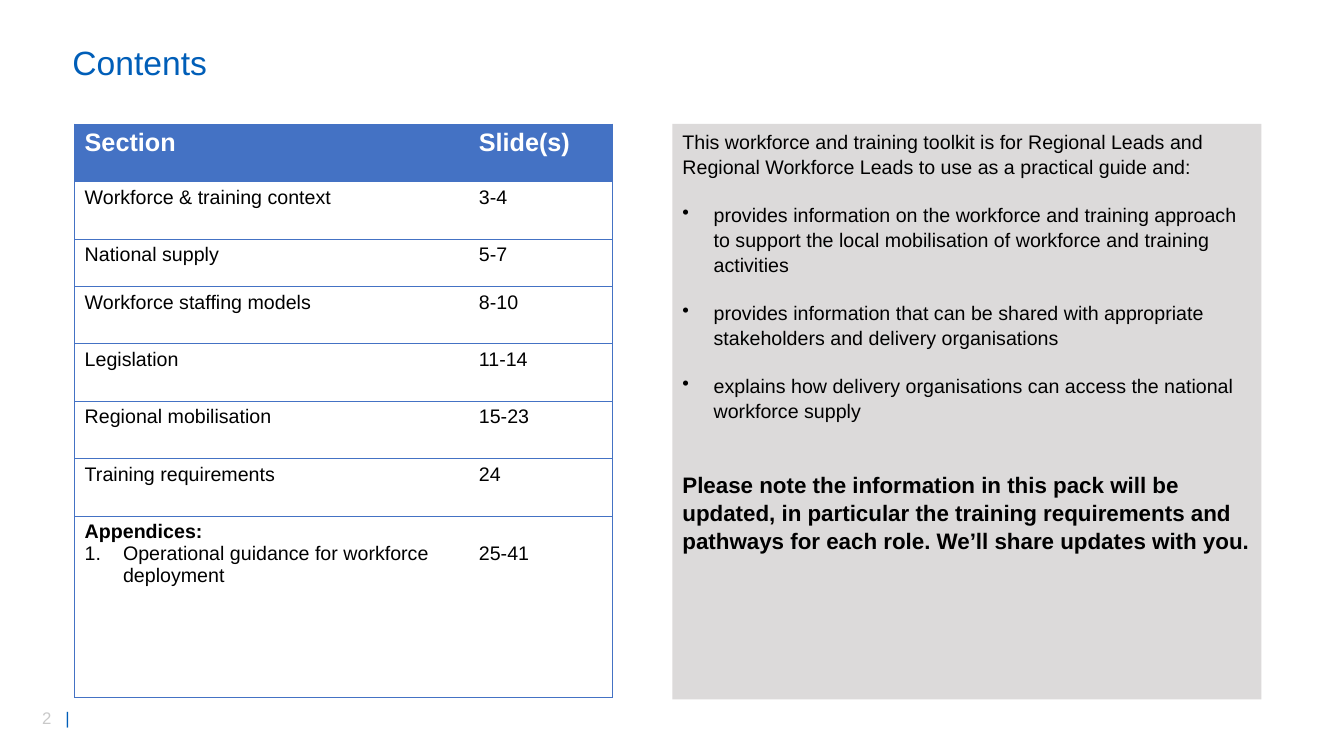
"""Builds a contents slide with a section table and a guidance panel."""
from lxml.etree import SubElement as Sub
from pptx import Presentation
from pptx.dml.color import RGBColor
from pptx.enum.shapes import MSO_SHAPE as Shape
from pptx.enum.text import MSO_ANCHOR as Anchor, PP_ALIGN as Align
from pptx.oxml.ns import qn
from pptx.util import Inches, Pt

BLUE = RGBColor(0x00, 0x5E, 0xB8)
HEAD = RGBColor(0x44, 0x72, 0xC4)
PANEL = RGBColor(0xDC, 0xDA, 0xDA)
PALE = RGBColor(0xC9, 0xC9, 0xC9)
BLACK = RGBColor(0x00, 0x00, 0x00)
WHITE = RGBColor(0xFF, 0xFF, 0xFF)

ROWS = [
    ("Section", "Slide(s)"),
    ("Workforce & training context", "3-4"),
    ("National supply", "5-7"),
    ("Workforce staffing models", "8-10"),
    ("Legislation", "11-14"),
    ("Regional mobilisation", "15-23"),
    ("Training requirements", "24"),
    ("Appendices:", "25-41"),
]
HEIGHTS = [0.57, 0.57, 0.47, 0.57, 0.57, 0.57, 0.57, 1.8]
INTRO = ("This workforce and training toolkit is for Regional Leads and "
         "Regional Workforce Leads to use as a practical guide and:")
POINTS = [
    "provides information on the workforce and training approach to support "
    "the local mobilisation of workforce and training activities",
    "provides information that can be shared with appropriate stakeholders "
    "and delivery organisations",
    "explains how delivery organisations can access the national workforce "
    "supply",
]
NOTE = ("Please note the information in this pack will be updated, in "
        "particular the training requirements and pathways for each role. "
        "We’ll share updates with you.")


class Deck:
    """Holds the style and the current slide."""

    def __init__(self):
        self.file = Presentation()
        self.file.slide_width = Inches(13.33)
        self.file.slide_height = Inches(7.5)
        self.slide = self.file.slides.add_slide(self.file.slide_layouts[6])
        self.face = "Arial"

    def style(self, para, text, size=14, color=BLACK, bold=False):
        """Fill a paragraph with text in one font."""
        para.text = text
        para.alignment = Align.LEFT
        font = para.font
        font.name, font.size, font.bold = self.face, Pt(size), bold
        font.color.rgb = color
        return para

    def item(self, para, indent, tag, **mark):
        """Give a paragraph a hanging indent and a bullet or number."""
        props = para._p.get_or_add_pPr()
        props.set("marL", str(Inches(indent)))
        props.set("indent", str(-Inches(indent)))
        bullet = props.makeelement(qn(tag), mark)
        props.insert_element_before(bullet, "a:tabLst", "a:defRPr", "a:extLst")

    def label(self, box, text, **style):
        """Add a text box with one line and return its paragraph."""
        frame = self.slide.shapes.add_textbox(*map(Inches, box)).text_frame
        frame.word_wrap = True
        frame.vertical_anchor = Anchor.MIDDLE
        return self.style(frame.paragraphs[0], text, **style)

    def number(self, box, page):
        """Add the page number with a bar at a tab stop."""
        para = self.label(box, page, size=12, color=PALE)
        props = para._p.get_or_add_pPr()
        tabs = props.makeelement(qn("a:tabLst"), {})
        Sub(tabs, qn("a:tab"), pos=str(Inches(0.23)), algn="l")
        props.insert_element_before(tabs, "a:defRPr", "a:extLst")
        bar = para.add_run()
        bar.text = "\t|"
        bar.font.color.rgb = BLUE

    def panel(self, box):
        """Add the grey panel with intro, points and note."""
        rect = self.slide.shapes.add_shape(Shape.RECTANGLE, *map(Inches, box))
        rect.shadow.inherit = False
        rect.fill.solid()
        rect.fill.fore_color.rgb = PANEL
        rect.line.fill.background()
        frame = rect.text_frame
        frame.word_wrap = True
        frame.vertical_anchor = Anchor.TOP
        self.style(frame.paragraphs[0], INTRO)
        for point in POINTS:
            para = self.style(frame.add_paragraph(), point)
            para.space_before = Pt(16.9)
            self.item(para, 0.31, "a:buChar", char="•")
        last = self.style(frame.add_paragraph(), NOTE, size=16, bold=True)
        last.space_before = Pt(33.8)
        for para in frame.paragraphs:
            para.line_spacing = 1.05

    def border(self, cell, sides):
        """Draw thin lines on the named sides and clear the others."""
        props = cell._tc.get_or_add_tcPr()
        for side in "LRTB":
            line = Sub(props, qn(f"a:ln{side}"), w=str(Pt(0.5)))
            if side in sides:
                fill = Sub(line, qn("a:solidFill"))
                Sub(fill, qn("a:srgbClr"), val=str(HEAD))
            else:
                Sub(line, qn("a:noFill"))

    def table(self, box):
        """Add the section table."""
        grid = self.slide.shapes.add_table(
            len(ROWS), 2, *map(Inches, box)).table
        grid.first_row = grid.horz_banding = False
        for col, width in zip(grid.columns, (3.91, 1.42)):
            col.width = Inches(width)
        for r, (texts, height) in enumerate(zip(ROWS, HEIGHTS)):
            grid.rows[r].height = Inches(height)
            for c, text in enumerate(texts):
                cell = grid.cell(r, c)
                self.border(cell, "LTB" if c == 0 else "RTB")
                para = cell.text_frame.paragraphs[0]
                if r == 0:
                    cell.fill.solid()
                    cell.fill.fore_color.rgb = HEAD
                    self.style(para, text, 18, WHITE, True)
                else:
                    cell.fill.background()
                    self.style(para, text)
        first, pages = grid.rows[len(ROWS) - 1].cells
        first.text_frame.paragraphs[0].font.bold = True
        guide = self.style(first.text_frame.add_paragraph(),
                           "Operational guidance for workforce deployment")
        self.item(guide, 0.38, "a:buAutoNum", type="arabicPeriod")
        pages.margin_top = Inches(0.27)


def main():
    deck = Deck()
    deck.number((0.32, 6.97, 0.71, 0.3), "2")
    title = deck.label((0.62, 0.31, 10.43, 0.67), "Contents",
                       size=24, color=BLUE)
    title.line_spacing = 0.9
    deck.panel((6.67, 1.23, 5.84, 5.71))
    deck.table((0.74, 1.23, 5.33, 5.71))
    deck.file.save("out.pptx")


if __name__ == "__main__":
    main()
